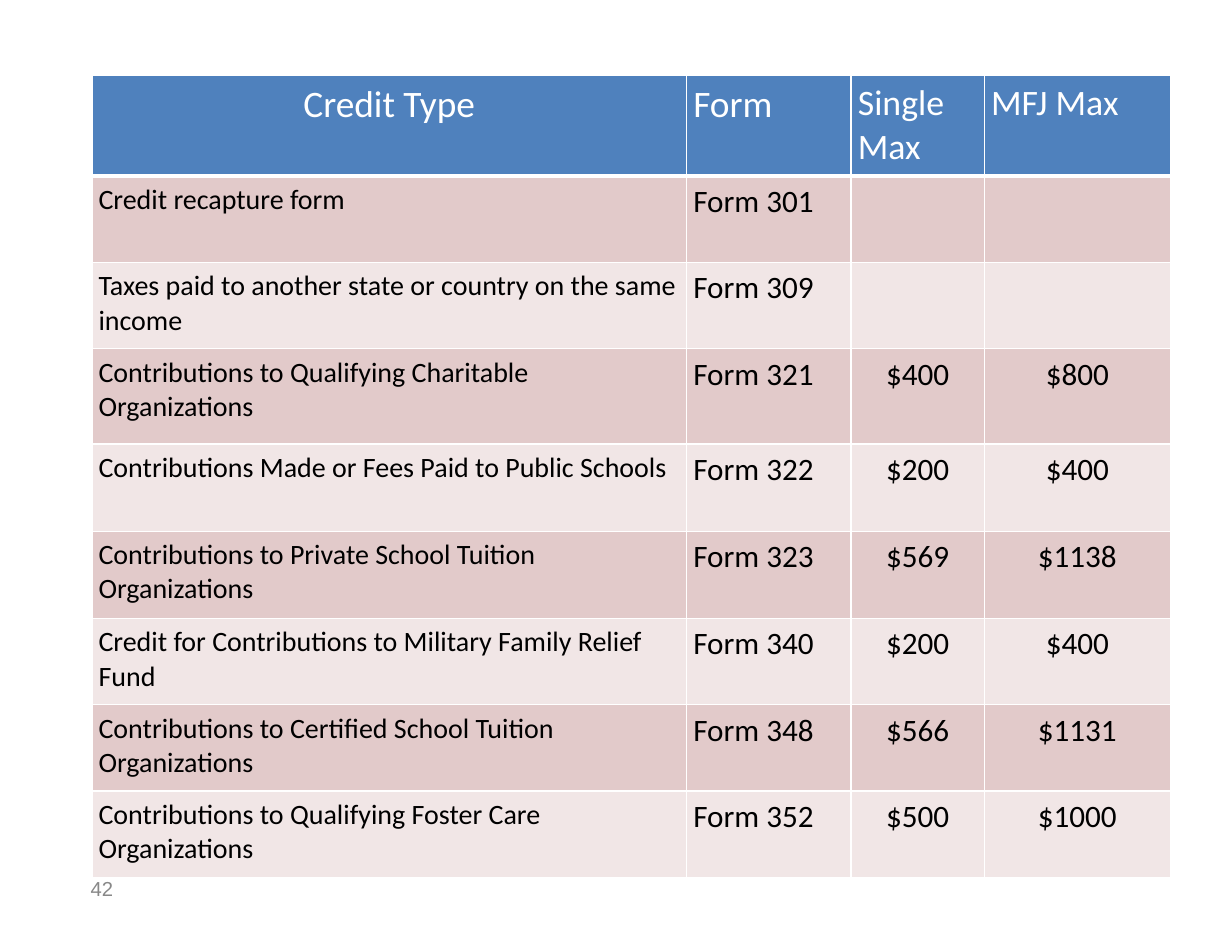
"""Build the tax credit table slide."""
from lxml import etree
from pptx import Presentation
from pptx.dml.color import RGBColor
from pptx.enum.text import MSO_ANCHOR, MSO_AUTO_SIZE, PP_ALIGN
from pptx.oxml.ns import qn
from pptx.util import Inches, Pt

COLORS = {"header": "4F81BD", "odd": "E2CACA", "even": "F1E6E6",
          "white": "FFFFFF", "black": "000000", "gray": "888888"}
HEADER = ("Credit Type", "Form", "Single Max", "MFJ Max")
HEADER_SIZES = (24, 24, 23, 23)
CREDITS = [
    ("Credit recapture form", 301, "", ""),
    ("Taxes paid to another state or country on the same income", 309, "", ""),
    ("Contributions to Qualifying Charitable Organizations", 321, "$400", "$800"),
    ("Contributions Made or Fees Paid to Public Schools", 322, "$200", "$400"),
    ("Contributions to Private School Tuition Organizations", 323, "$569", "$1138"),
    ("Credit for Contributions to Military Family Relief Fund", 340, "$200", "$400"),
    ("Contributions to Certified School Tuition Organizations", 348, "$566", "$1131"),
    ("Contributions to Qualifying Foster Care Organizations", 352, "$500", "$1000"),
]
COL_WIDTHS = (5.31, 1.47, 1.19, 1.66)
ROW_HEIGHTS = (0.89, 0.77, 0.77, 0.85, 0.78, 0.78, 0.77, 0.77, 0.77)
LEFT, TOP = 0.82, 0.67


def write(tf, text, size=20, color="black", font="Calibri", align=PP_ALIGN.LEFT):
    p = tf.paragraphs[0]
    p.alignment = align
    r = p.add_run()
    r.text = text
    r.font.size = Pt(size)
    r.font.name = font
    r.font.bold = False
    r.font.color.rgb = RGBColor.from_string(COLORS[color])


def set_insets(box, side=0.06):
    box.margin_left = box.margin_right = Inches(side)
    box.margin_top = box.margin_bottom = Inches(0.06)


def style_cell(cell, fill, top=1, bottom=1):
    set_insets(cell)
    tc_pr = cell._tc.get_or_add_tcPr()
    for side, width in (("L", 1), ("R", 1), ("T", top), ("B", bottom)):
        ln = etree.SubElement(tc_pr, qn(f"a:ln{side}"), w=str(Pt(width)))
        solid = etree.SubElement(ln, qn("a:solidFill"))
        etree.SubElement(solid, qn("a:srgbClr"), val=COLORS["white"])
    cell.fill.solid()
    cell.fill.fore_color.rgb = RGBColor.from_string(COLORS[fill])


def add_credit_table(s):
    rows = len(CREDITS) + 1
    frame = s.shapes.add_table(rows, len(HEADER), Inches(LEFT), Inches(TOP),
                               Inches(sum(COL_WIDTHS)), Inches(sum(ROW_HEIGHTS)))
    table = frame.table
    for col, width in zip(table.columns, COL_WIDTHS):
        col.width = Inches(width)
    for row, height in zip(table.rows, ROW_HEIGHTS):
        row.height = Inches(height)

    for j, (text, size) in enumerate(zip(HEADER, HEADER_SIZES)):
        cell = table.cell(0, j)
        style_cell(cell, "header", bottom=3)
        write(cell.text_frame, text, size=size, color="white",
              align=PP_ALIGN.LEFT if j else PP_ALIGN.CENTER)

    for i, (credit, form, single, joint) in enumerate(CREDITS, 1):
        for j, text in enumerate((credit, f"Form {form}", single, joint)):
            cell = table.cell(i, j)
            style_cell(cell, "odd" if i % 2 else "even", top=3 if i == 1 else 1)
            if text:
                write(cell.text_frame, text, size=20 if j else 18,
                      align=PP_ALIGN.CENTER if j > 1 else PP_ALIGN.LEFT)


def add_page_number(s, number):
    box = s.shapes.add_textbox(Inches(0.76), Inches(7.77), Inches(0.31), Inches(0.32))
    tf = box.text_frame
    tf.word_wrap = False
    tf.auto_size = MSO_AUTO_SIZE.SHAPE_TO_FIT_TEXT
    tf.vertical_anchor = MSO_ANCHOR.MIDDLE
    set_insets(tf, side=0.05)
    write(tf, number, size=13, color="gray", font="Arial")


def main():
    prs = Presentation()
    prs.slide_width, prs.slide_height = Inches(11), Inches(8.5)
    s = prs.slides.add_slide(prs.slide_layouts[6])
    add_credit_table(s)
    add_page_number(s, "42")
    prs.save("out.pptx")


if __name__ == "__main__":
    main()
